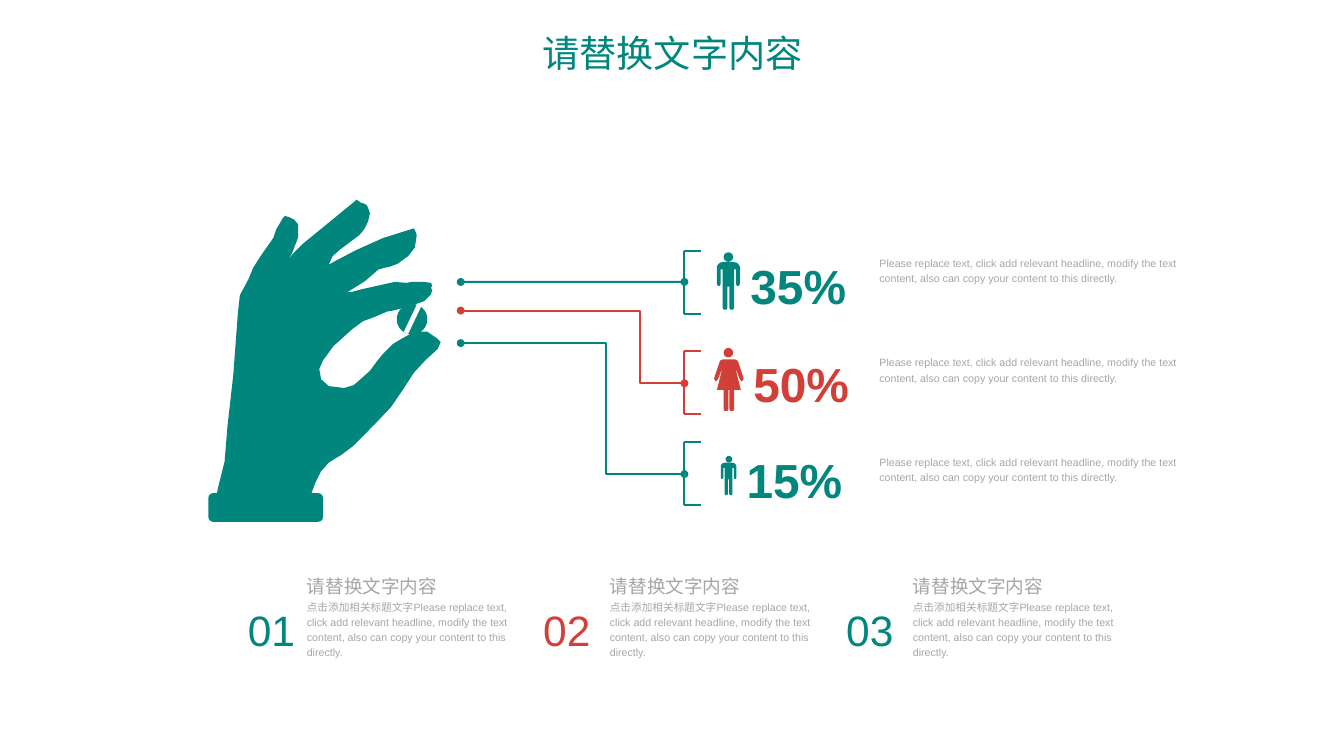
from lxml import etree
from pptx import Presentation
from pptx.dml.color import RGBColor
from pptx.enum.shapes import MSO_CONNECTOR, MSO_SHAPE
from pptx.enum.text import MSO_ANCHOR, MSO_AUTO_SIZE, PP_ALIGN
from pptx.oxml.ns import qn
from pptx.util import Inches, Pt

STRAIGHT, ELBOW = MSO_CONNECTOR.STRAIGHT, MSO_CONNECTOR.ELBOW
OVAL, ROUNDED = MSO_SHAPE.OVAL, MSO_SHAPE.ROUNDED_RECTANGLE
TOP, MIDDLE, BOTTOM = MSO_ANCHOR.TOP, MSO_ANCHOR.MIDDLE, MSO_ANCHOR.BOTTOM
LEFT, CENTER = PP_ALIGN.LEFT, PP_ALIGN.CENTER
FIT = MSO_AUTO_SIZE.SHAPE_TO_FIT_TEXT

COLORS = {"teal": "00867D", "red": "D23E38", "gray": "A6A6A6", "white": "FFFFFF"}
HEADLINE = "请替换文字内容"
BODY = ("Please replace text, click add relevant headline, modify the text content, "
        "also can copy your content to this directly.")

# Outlines in hundredths of an inch from their own top left corner
HAND = [
    (95, 323), (98, 318), (100, 312), (106, 296), (112, 284), (120, 275), (133, 267),
    (145, 258), (168, 235), (185, 217), (198, 198), (209, 181), (221, 168), (234, 156),
    (237, 149), (233, 145), (223, 138), (214, 138), (206, 140), (197, 145), (187, 151),
    (177, 161), (172, 167), (163, 179), (153, 188), (146, 194), (136, 197), (120, 195),
    (112, 188), (110, 177), (114, 168), (125, 153), (145, 135), (156, 127), (167, 123),
    (181, 117), (187, 116), (206, 111), (220, 106), (227, 99), (228, 95), (227, 92),
    (228, 90), (227, 87), (219, 86), (207, 86), (201, 87), (189, 86), (153, 94),
    (146, 96), (139, 97), (155, 87), (158, 85), (172, 73), (179, 71), (184, 70),
    (192, 67), (203, 59), (210, 50), (212, 37), (211, 34), (209, 30), (177, 40),
    (148, 53), (127, 64), (120, 68), (124, 59), (132, 52), (152, 37), (157, 31),
    (161, 23), (163, 14), (160, 6), (157, 4), (153, 3), (152, 2), (149, 0), (148, 1),
    (93, 46), (82, 57), (77, 64), (82, 55), (88, 39), (88, 26), (84, 21), (78, 18),
    (74, 17), (72, 19), (68, 26), (65, 31), (62, 40), (50, 57), (41, 71), (36, 83),
    (27, 100), (25, 117), (20, 184), (14, 237), (11, 274), (4, 302), (0, 323),
]
MAN_LEFT_HALF = [
    (12, 0), (7, 0), (3, 1), (1, 3), (0, 5), (0, 23), (1, 25), (3, 25), (4, 23), (4, 8),
    (6, 8), (6, 48), (7, 50), (10, 50), (11, 48), (11, 26),
]
WOMAN_LEFT_HALF = [
    (15, 0), (9, 0), (7, 1), (6, 2), (0, 20), (1, 22), (2, 23), (4, 21), (9, 8), (3, 32),
    (10, 32), (10, 52), (11, 54), (14, 54), (15, 52), (15, 32),
]


def mirrored(left_half, width):
    return left_half + [(width - x, y) for x, y in reversed(left_half)]


MAN, WOMAN = mirrored(MAN_LEFT_HALF, 24), mirrored(WOMAN_LEFT_HALF, 31)


def rgb(color):
    return RGBColor.from_string(COLORS[color])


def paint(shape, color):
    shape.shadow.inherit = False
    shape.fill.solid()
    shape.fill.fore_color.rgb = rgb(color)
    shape.line.fill.background()


def add_preset(slide, kind, left, top, width, height, color, rotation=0):
    shape = slide.shapes.add_shape(kind, Inches(left), Inches(top),
                                   Inches(width), Inches(height))
    shape.rotation = rotation
    paint(shape, color)


def add_outline(slide, points, left, top, color, zoom=1):
    builder = slide.shapes.build_freeform(*points[0], scale=Inches(0.01) * zoom)
    builder.add_line_segments(points[1:], close=True)
    paint(builder.convert_to_shape(Inches(left), Inches(top)), color)


def add_line(slide, start, end, color, kind=STRAIGHT, dots=False, bend=None):
    connector = slide.shapes.add_connector(kind, *map(Inches, start + end))
    connector.line.color.rgb = rgb(color)
    connector.line.width = Pt(1.5)
    properties = connector._element.spPr
    if dots:
        for tag in ("a:headEnd", "a:tailEnd"):
            etree.SubElement(connector.line._get_or_add_ln(), qn(tag), type="oval")
    if bend:
        guides = properties.find(qn("a:prstGeom")).find(qn("a:avLst"))
        etree.SubElement(guides, qn("a:gd"), name="adj1", fmla=f"val {round(bend * 100000)}")
    etree.SubElement(properties, qn("a:effectLst"))


def add_text(slide, text, box, size, color, anchor=TOP, align=LEFT, wrap=True,
             bold=False, font="Arial", spacing=1.2, margin=0):
    frame = slide.shapes.add_textbox(*map(Inches, box)).text_frame
    frame.word_wrap = wrap
    frame.auto_size = FIT
    frame.vertical_anchor = anchor
    frame.margin_left = frame.margin_right = Inches(margin)
    frame.margin_top = frame.margin_bottom = Inches(margin / 2)
    frame.text = text
    paragraph = frame.paragraphs[0]
    paragraph.alignment = align
    paragraph.line_spacing = spacing
    run_font = paragraph.runs[0].font
    run_font.name, run_font.size, run_font.bold = font, Pt(size), bold
    run_font.color.rgb = rgb(color)


def add_hand(slide, left, top):
    add_outline(slide, HAND, left + 0.06, top, "teal")
    # Cuff
    add_preset(slide, ROUNDED, left, top + 3.07, 1.2, 0.3, "teal")
    # Pill with its slot
    add_preset(slide, OVAL, left + 1.97, top + 1.09, 0.32, 0.32, "teal", 25.4)
    add_preset(slide, ROUNDED, left + 2.11, top + 1.09, 0.05, 0.32, "white", 25.4)


def add_bracket(slide, left, top, color):
    right, bottom = left + 0.17, top + 0.66
    add_line(slide, (left, top), (left, bottom), color)
    for y in (top, bottom):
        add_line(slide, (left, y), (right, y), color)


def add_person(slide, points, left, top, head, color, zoom=1):
    head_left, head_width, head_height, neck = head
    add_preset(slide, OVAL, left + head_left, top, head_width, head_height, color)
    add_outline(slide, points, left, top + neck, color, zoom)


def add_share(slide, left, top, color, source_y, bend, value, value_at, note_top):
    """Bracket at left, top, with its lead line, percentage and note."""
    add_bracket(slide, left, top, color)
    add_line(slide, (left - 2.34, source_y), (left, top + (0.32 if not bend else 0.34)),
             color, ELBOW if bend else STRAIGHT, dots=True, bend=bend)
    add_text(slide, value, (left + value_at[0], top + value_at[1], 1.01, 0.66), 36, color,
             MIDDLE, wrap=False, bold=True)
    add_text(slide, BODY, (left + 2.04, note_top, 3.14, 0.31), 8, "gray")


def add_point(slide, left, top, number, number_offset, color):
    add_text(slide, HEADLINE, (left, top, 1.37, 0.26), 14, "gray", MIDDLE, wrap=False)
    add_text(slide, "点击添加相关标题文字" + BODY, (left, top + 0.27, 2.21, 0.65), 8,
             "gray", MIDDLE)
    add_text(slide, number, (left - number_offset, top + 0.33, 0.5, 0.54), 32, color,
             BOTTOM, CENTER, wrap=False, spacing=1)


def main():
    deck = Presentation()
    deck.slide_width, deck.slide_height = Inches(14.06), Inches(7.91)
    slide = deck.slides.add_slide(deck.slide_layouts[6])

    add_text(slide, HEADLINE, (5.31, 0.17, 3.45, 0.67), 28, "teal", MIDDLE, CENTER,
             font="Noto Sans CJK SC", margin=0.1)
    add_hand(slide, 2.18, 2.09)

    # Shares: bracket top, colour, lead line start and bend, value, value offset
    shares = [
        (2.63, "teal", 2.95, None, "35%", (0.69, -0.03)),
        (3.67, "red", 3.25, 0.8, "50%", (0.72, -0.05)),
        (4.62, "teal", 3.59, 0.65, "15%", (0.65, 0.01)),
    ]
    for row, share in enumerate(shares):
        add_share(slide, 7.16, *share, note_top=2.66 + 1.04 * row)

    # People
    add_person(slide, MAN, 7.5, 2.64, (0.07, 0.1, 0.1, 0.1), "teal")
    add_person(slide, WOMAN, 7.47, 3.64, (0.1, 0.1, 0.1, 0.12), "red")
    add_person(slide, MAN, 7.54, 4.77, (0.05, 0.07, 0.07, 0.07), "teal", zoom=0.68)

    # Numbered points
    points = [("01", 0.62, "teal"), ("02", 0.7, "red"), ("03", 0.7, "teal")]
    for column, point in enumerate(points):
        add_point(slide, 3.21 + 3.17 * column, 5.98, *point)

    deck.save("out.pptx")


if __name__ == "__main__":
    main()
